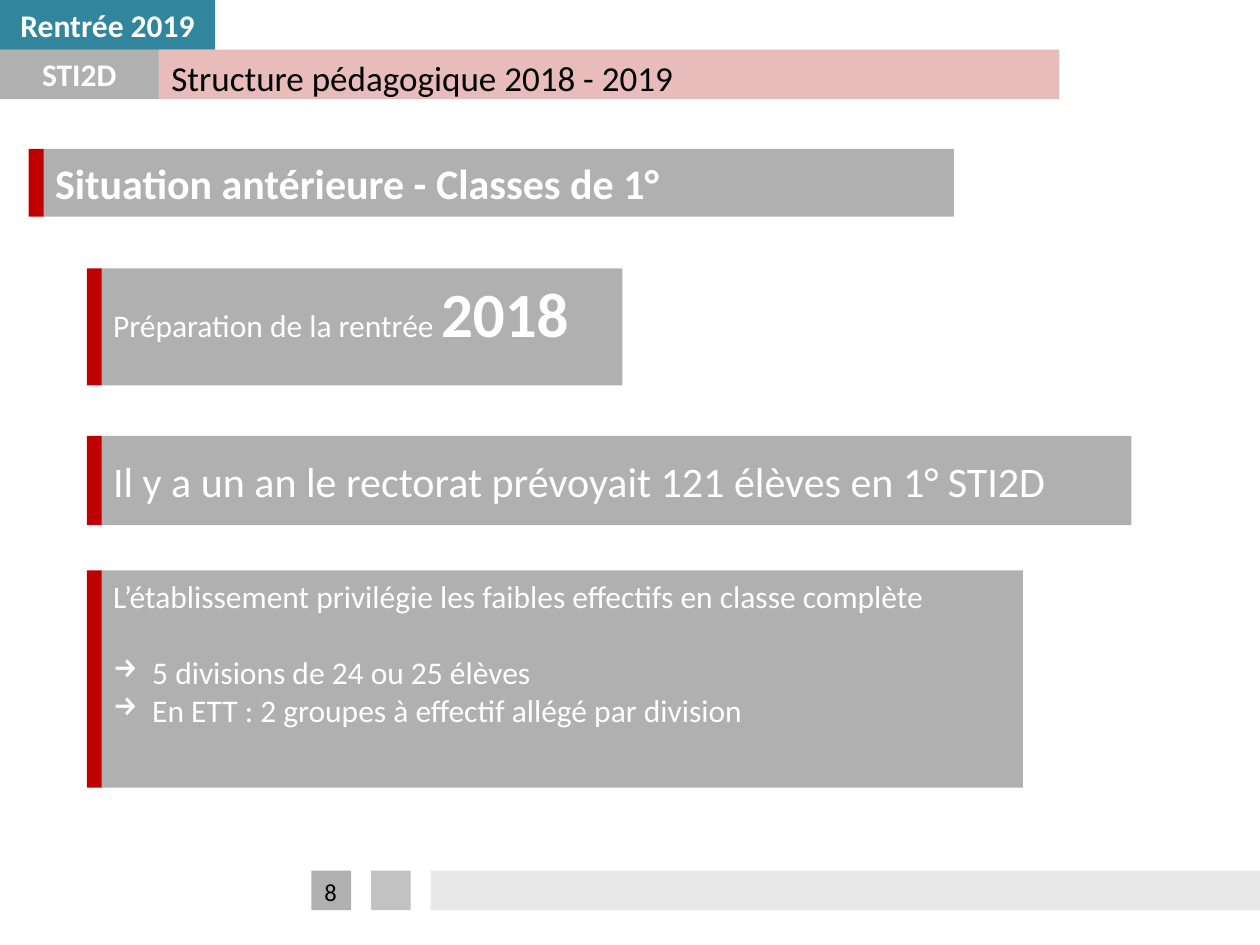
from lxml import etree
from pptx import Presentation
from pptx.dml.color import RGBColor
from pptx.enum import shapes, text
from pptx.oxml.ns import qn
from pptx.util import Cm, Pt

BLACK, WHITE, RED, TEAL, PINK = "000000", "FFFFFF", "C00000", "31859C", "D99694"
GREY_ALPHA = 31
BAR_WIDTH, BODY_OFFSET = 0.3, 0.28
LEFT, CENTER = text.PP_ALIGN.LEFT, text.PP_ALIGN.CENTER
TOP, MIDDLE = text.MSO_ANCHOR.TOP, text.MSO_ANCHOR.MIDDLE


def set_color(color_format, hex_value, alpha=None):
    color_format.rgb = RGBColor.from_string(hex_value)
    if alpha is not None:
        # the color element is the only child of the solid fill
        color = color_format._xFill[0]
        etree.SubElement(color, qn("a:alpha"), val=str(alpha * 1000))


def add_rect(parent, box, color, alpha=None):
    rect = parent.add_shape(shapes.MSO_SHAPE.RECTANGLE, *map(Cm, box))
    rect.shadow.inherit = False
    rect.line.fill.background()
    rect.fill.solid()
    set_color(rect.fill.fore_color, color, alpha)
    return rect


def add_span(para, words, size, color=WHITE, bold=False):
    span = para.add_run()
    span.text = words
    formats = {"name": "Calibri", "size": Pt(size), "bold": bold}
    for name, value in formats.items():
        setattr(span.font, name, value)
    set_color(span.font.color, color)


def set_text(shape, paragraphs, anchor=MIDDLE, align=LEFT):
    """Each paragraph is a list of (words, size, color, bold) spans."""
    frame = shape.text_frame
    frame.word_wrap = True
    frame.vertical_anchor = anchor
    for index, spans in enumerate(paragraphs):
        para = frame.add_paragraph() if index else frame.paragraphs[0]
        para.alignment = align
        for span in spans:
            add_span(para, *span)
    return frame


def add_arrow_bullet(para):
    properties = para._p.get_or_add_pPr()
    properties.set("marL", str(Cm(0.79)))
    properties.set("indent", str(-Cm(0.79)))
    etree.SubElement(properties, qn("a:buChar"), char="→")


def build_header(page, box):
    left, top, width, row = box
    # Two labels, one above the other
    label = add_rect(page.shapes, (left, top, 4.34, row), TEAL)
    set_text(label, [[("Rentrée 2019", 18, WHITE, True)]], align=CENTER)
    tab_width = 3.2
    add_rect(page.shapes, (left + tab_width, top + row, width - tab_width, row), PINK, 63)
    tab = add_rect(page.shapes, (left, top + row, tab_width, row), BLACK, GREY_ALPHA)
    set_text(tab, [[("STI2D", 18, WHITE, True)]], align=CENTER)

    # Title over the pink strip, brought in front of it
    title = page.shapes.title
    place = {"left": left + tab_width, "top": top + row,
             "width": width - tab_width, "height": 1.11}
    for name, value in place.items():
        setattr(title, name, Cm(value))
    frame = set_text(title, [[("Structure pédagogique 2018 - 2019", 20, BLACK)]])
    frame.auto_size = text.MSO_AUTO_SIZE.SHAPE_TO_FIT_TEXT
    page.shapes._spTree.append(title._element)


def build_footer(page, box):
    left, top, width, side = box
    step = 1.2
    for index, alpha in enumerate((GREY_ALPHA, 24)):
        add_rect(page.shapes, (left + index * step, top, side, side), BLACK, alpha)
    add_rect(page.shapes, (left + 2 * step, top, width - 2 * step, side), BLACK, 9)
    # Page number
    number = page.shapes.add_textbox(Cm(left - 0.34), Cm(top), Cm(1.45), Cm(1.02))
    set_text(number, [[("8", 14, BLACK)]], anchor=TOP, align=CENTER)


def build_banner(page, box, paragraphs, anchor=MIDDLE):
    """Grey panel with a red bar on its left edge."""
    left, top, width, height = box
    group = page.shapes.add_group_shape().shapes
    body = add_rect(group, (left + BODY_OFFSET, top, width - BODY_OFFSET, height),
                    BLACK, GREY_ALPHA)
    add_rect(group, (left, top, BAR_WIDTH, height), RED)
    return set_text(body, paragraphs, anchor)


def build_page(deck):
    page = deck.slides.add_slide(deck.slide_layouts[5])
    build_header(page, (0, 0, 21.36, 1))
    build_footer(page, (6.28, 17.55, 19.12, 0.8))

    # Section heading
    build_banner(page, (0.58, 3, 18.65, 1.37),
                 [[("Situation antérieure - Classes de 1°", 24, WHITE, True)]])

    # Indented panels
    indent = 1.75
    build_banner(page, (indent, 5.41, 10.8, 2.36),
                 [[("Préparation de la rentrée ", 18), ("2018", 36, WHITE, True)]], TOP)
    build_banner(page, (indent, 8.79, 21.06, 1.8),
                 [[("Il y a un an le rectorat prévoyait 121 élèves en 1° STI2D", 24)]])
    choices = build_banner(page, (indent, 11.5, 18.87, 4.38), [
        [("L’établissement privilégie les faibles effectifs en classe complète", 18)],
        [("5 divisions de 24 ou 25 élèves", 18)],
        [("En ETT : 2 groupes à effectif allégé par division", 18)],
    ], TOP)
    bullets = choices.paragraphs[1:]
    for para in bullets:
        add_arrow_bullet(para)
    bullets[0].space_before = Pt(22)


def main():
    deck = Presentation()
    deck.slide_width, deck.slide_height = Cm(25.4), Cm(19.05)
    build_page(deck)
    deck.save("out.pptx")


if __name__ == "__main__":
    main()
